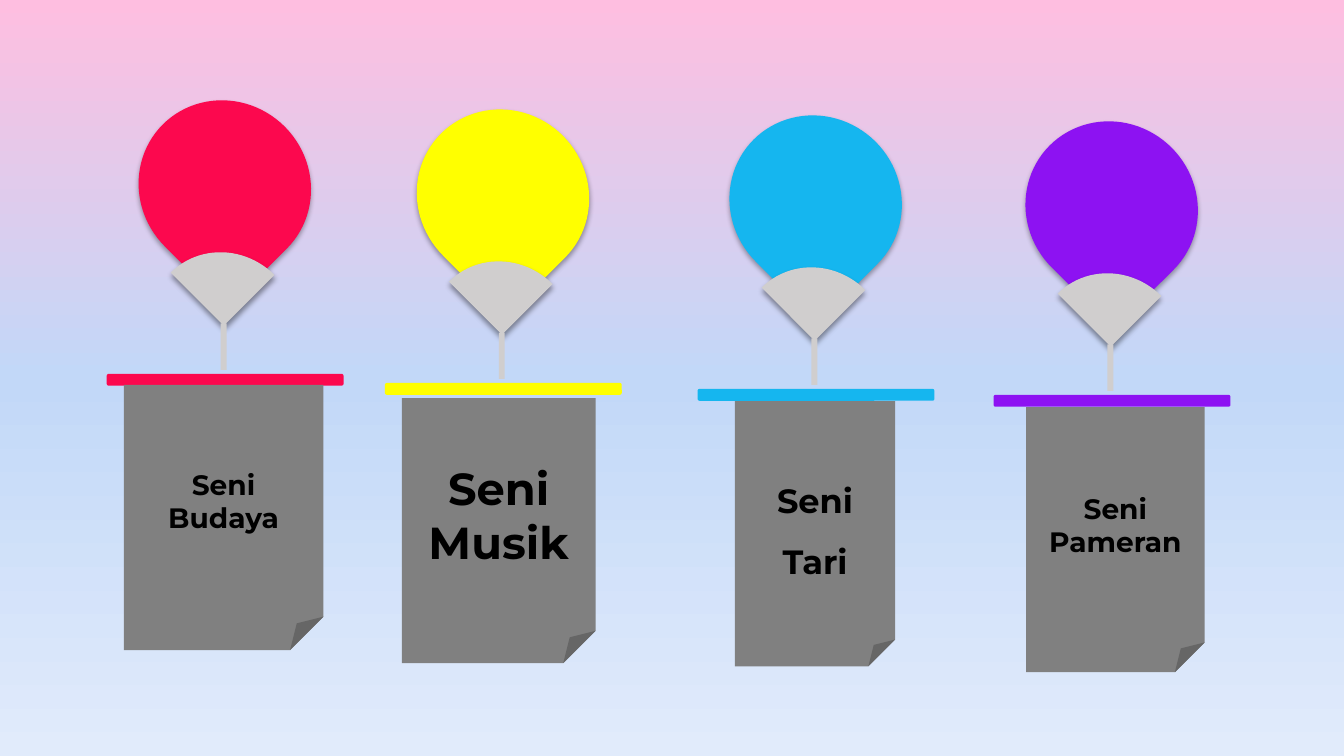
from copy import deepcopy

from lxml.etree import SubElement
from pptx import Presentation
from pptx.dml.color import RGBColor
from pptx.enum.shapes import MSO_SHAPE
from pptx.enum.text import MSO_ANCHOR, PP_ALIGN
from pptx.oxml.ns import qn
from pptx.util import Cm, Pt

COLORS = {
    "sky_top": "FEBEE0",
    "sky_middle": "C2D8F8",
    "sky_bottom": "E1EBFB",
    "red": "FC084E",
    "yellow": "FFFF00",
    "blue": "15B6EF",
    "purple": "8D12F2",
    "basket": "D0CECE",
    "paper": "808080",
    "text": "000000",
}

BALLOONS = [
    ("Seni Budaya", "red", 3.53, 2.49, (3.12, 9.70, 5.03), 20, 1.0),
    ("Seni Musik", "yellow", 10.54, 2.72, (10.13, 10.03, 4.88), 32, 1.0),
    ("Seni Tari", "blue", 18.42, 2.87, (18.52, 10.11, 4.04), 24, 1.5),
    ("Seni Pameran", "purple", 25.88, 3.02, (25.86, 10.26, 4.50), 20, 1.0),
]


class BalloonSlide:
    font = "Montserrat"

    def __init__(self, presentation):
        self.slide = presentation.slides.add_slide(presentation.slide_layouts[6])

    def color(self, name):
        return RGBColor.from_string(COLORS[name])

    def background(self, names):
        fill = self.slide.background.fill
        fill.gradient()
        fill.gradient_angle = 270
        stop_list = self.slide.element.find(".//" + qn("a:gsLst"))
        stop_list.append(deepcopy(stop_list[0]))
        for index, (stop, name) in enumerate(zip(fill.gradient_stops, names)):
            stop.position = index / (len(names) - 1)
            stop.color.rgb = self.color(name)

    def shape(self, group, kind, box, color, rotation=0):
        shape = group.shapes.add_shape(kind, *map(Cm, box))
        shape.shadow.inherit = False
        shape.fill.solid()
        shape.fill.fore_color.rgb = self.color(color)
        shape.line.fill.background()
        shape.rotation = rotation
        return shape

    def shadow(self, shape, opacity, blur, distance):
        effects = shape.element.spPr.find(qn("a:effectLst"))
        outer = SubElement(
            effects, qn("a:outerShdw"), blurRad=str(Pt(blur)),
            dist=str(Pt(distance)), dir="5400000", algn="t", rotWithShape="0",
        )
        shade = SubElement(outer, qn("a:srgbClr"), val=COLORS["text"])
        SubElement(shade, qn("a:alpha"), val=str(opacity * 1000))

    def label(self, shape, text, size, spacing):
        frame = shape.text_frame
        frame.word_wrap = True
        frame.vertical_anchor = MSO_ANCHOR.MIDDLE
        paragraph = frame.paragraphs[0]
        paragraph.alignment = PP_ALIGN.CENTER
        paragraph.line_spacing = spacing
        run = paragraph.add_run()
        run.text = text
        run.font.name = self.font
        run.font.size = Pt(size)
        run.font.bold = True
        run.font.color.rgb = self.color("text")

    def balloon(self, text, color, left, top, paper_place, size, spacing):
        group = self.slide.shapes.add_group_shape()
        envelope = self.shape(
            group, MSO_SHAPE.TEAR, (left, top, 4.27, 4.42), color, 135)
        self.shadow(envelope, 32, 3.5, 2.2)
        basket = self.shape(
            group, MSO_SHAPE.PIE, (left + 0.22, top + 3.91, 3.78, 3.61), "basket", 45)
        basket.adjustments[0] = 108
        basket.adjustments[1] = 162
        self.shadow(basket, 40, 4, 3)
        self.shape(
            group, MSO_SHAPE.RECTANGLE, (left + 2.03, top + 5.66, 0.15, 1.17), "basket")
        self.shape(
            group, MSO_SHAPE.ROUNDED_RECTANGLE,
            (left - 0.84, top + 6.93, 5.97, 0.3), color)
        paper = self.shape(
            group, MSO_SHAPE.FOLDED_CORNER, (*paper_place, 6.68), "paper")
        self.label(paper, text, size, spacing)


def main():
    presentation = Presentation()
    presentation.slide_width = Cm(33.87)
    presentation.slide_height = Cm(19.05)
    balloon_slide = BalloonSlide(presentation)
    balloon_slide.background(["sky_top", "sky_middle", "sky_bottom"])
    for balloon in BALLOONS:
        balloon_slide.balloon(*balloon)
    presentation.save("out.pptx")


if __name__ == "__main__":
    main()
